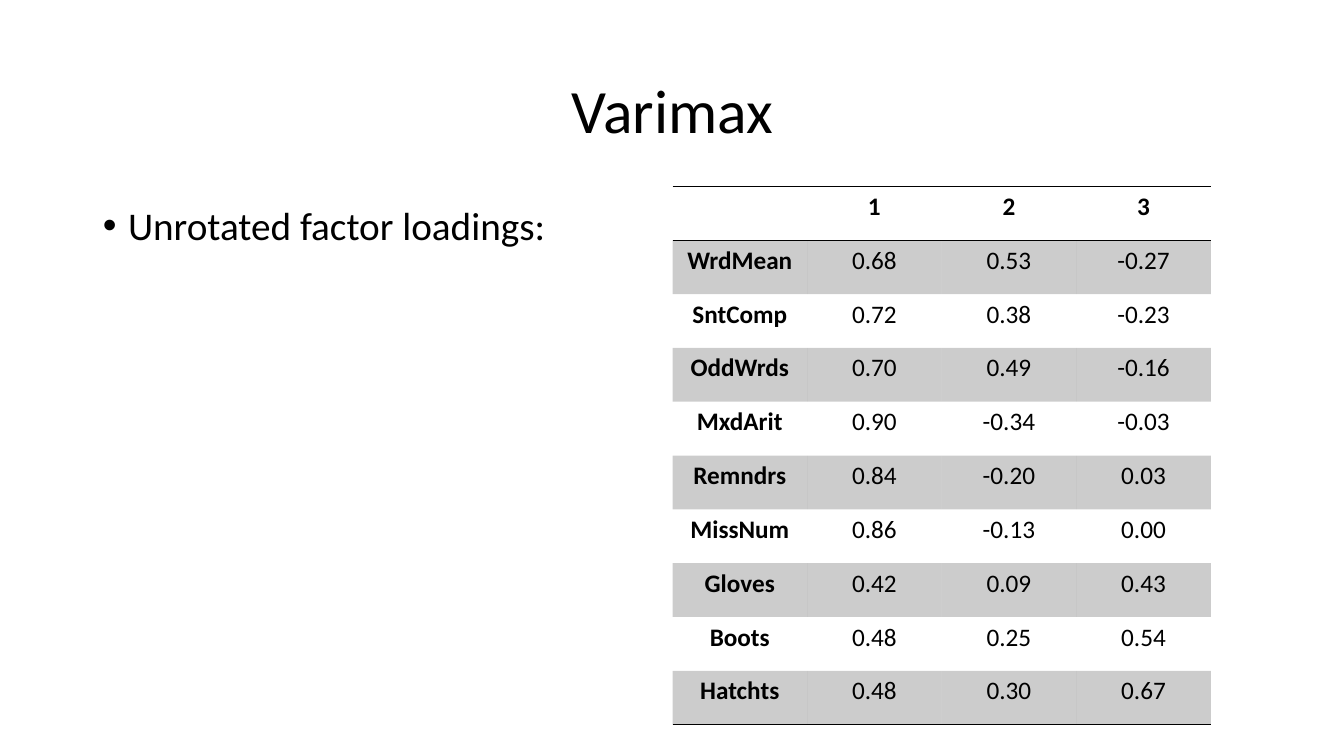
from dataclasses import dataclass
from typing import Any

import pptx
import pptx.dml.color
import pptx.enum.text
import pptx.oxml
import pptx.oxml.ns
import pptx.util
from pptx.util import Inches

BLACK = pptx.dml.color.RGBColor(0x00, 0x00, 0x00)
FONT_NAME = "Calibri"
BAND_OPACITY = 20  # percent
NO_TABLE_STYLE = "{2D5ABB26-0587-4C30-8999-92F81FD0307C}"
CENTER = pptx.enum.text.PP_ALIGN.CENTER
ANCHOR = pptx.enum.text.MSO_ANCHOR


@dataclass(frozen=True)
class Loading:
    variable: str
    factors: tuple[str, str, str]


HEADER = Loading("", ("1", "2", "3"))
LOADINGS = [
    Loading("WrdMean", ("0.68", "0.53", "-0.27")),
    Loading("SntComp", ("0.72", "0.38", "-0.23")),
    Loading("OddWrds", ("0.70", "0.49", "-0.16")),
    Loading("MxdArit", ("0.90", "-0.34", "-0.03")),
    Loading("Remndrs", ("0.84", "-0.20", "0.03")),
    Loading("MissNum", ("0.86", "-0.13", "0.00")),
    Loading("Gloves", ("0.42", "0.09", "0.43")),
    Loading("Boots", ("0.48", "0.25", "0.54")),
    Loading("Hatchts", ("0.48", "0.30", "0.67")),
]


def apply_format(target: Any, values: dict[str, Any]) -> None:
    for name, value in values.items():
        setattr(target, name, value)


def write_text(para: Any, text: str, size: float, bold: bool = False) -> None:
    span = para.add_run()
    span.text = text
    apply_format(span.font, {"name": FONT_NAME, "size": pptx.util.Pt(size), "bold": bold})
    span.font.color.rgb = BLACK


def append_xml(parent: Any, tag: str, attributes: str = "", content: str = "") -> None:
    namespace = pptx.oxml.ns.nsdecls("a")
    parent.append(pptx.oxml.parse_xml(f"<a:{tag} {namespace} {attributes}>{content}</a:{tag}>"))


def place_text(box: Any, top: float, height: float, anchor: Any) -> Any:
    """Move a placeholder and return its first paragraph."""
    apply_format(box, {"left": Inches(0.92), "top": Inches(top),
                       "width": Inches(11.5), "height": Inches(height)})
    apply_format(box.text_frame, {"word_wrap": True, "vertical_anchor": anchor,
                                  "auto_size": pptx.enum.text.MSO_AUTO_SIZE.NONE})
    para = box.text_frame.paragraphs[0]
    para.line_spacing = 0.9
    return para


def add_title(page: Any) -> None:
    para = place_text(page.shapes.title, 0.4, 1.45, ANCHOR.MIDDLE)
    para.alignment = CENTER
    write_text(para, "Varimax", 44)


def add_body(page: Any) -> None:
    para = place_text(page.placeholders[1], 2, 4.76, ANCHOR.TOP)
    para.space_before = pptx.util.Pt(10)
    write_text(para, "Unrotated factor loadings:", 28)
    properties = para._p.get_or_add_pPr()
    properties.set("marL", str(Inches(0.25)))
    properties.set("indent", str(Inches(-0.25)))
    append_xml(properties, "buFont", 'typeface="Arial"')
    append_xml(properties, "buChar", 'char="•"')


def add_rule(cell: Any, side: str) -> None:
    append_xml(cell._tc.get_or_add_tcPr(), f"ln{side}", f'w="{pptx.util.Pt(1)}"',
               f'<a:solidFill><a:srgbClr val="{BLACK}"/></a:solidFill>')


def shade_cell(cell: Any) -> None:
    cell.fill.solid()
    cell.fill.fore_color.rgb = BLACK
    # Only the cell's own fill is see-through, not its rules
    fill = cell._tc.tcPr.find(pptx.oxml.ns.qn("a:solidFill"))
    append_xml(fill[0], "alpha", f'val="{BAND_OPACITY * 1000}"')


def add_loadings_table(page: Any) -> None:
    records = [HEADER, *LOADINGS]
    frame = page.shapes.add_table(len(records), 4, Inches(6.67), Inches(1.85),
                                  Inches(5.34), Inches(5.34))
    table = frame.table
    apply_format(table, {"first_row": False, "horz_banding": False})
    table._tbl.tblPr.find(pptx.oxml.ns.qn("a:tableStyleId")).text = NO_TABLE_STYLE
    last_row = len(records) - 1
    for row, record in enumerate(records):
        for column, text in enumerate((record.variable, *record.factors)):
            cell = table.cell(row, column)
            para = cell.text_frame.paragraphs[0]
            para.alignment = CENTER
            if text:
                write_text(para, text, 18, bold=row == 0 or column == 0)
            # Rules around the header and under the last row
            if row == 0:
                add_rule(cell, "T")
            if row in (0, last_row):
                add_rule(cell, "B")
            # Every other row is shaded
            if row % 2:
                shade_cell(cell)


def main() -> None:
    deck = pptx.Presentation()
    apply_format(deck, {"slide_width": Inches(13.33), "slide_height": Inches(7.5)})
    page = deck.slides.add_slide(deck.slide_layouts[1])
    add_title(page)
    add_body(page)
    add_loadings_table(page)
    deck.save("out.pptx")


if __name__ == "__main__":
    main()
